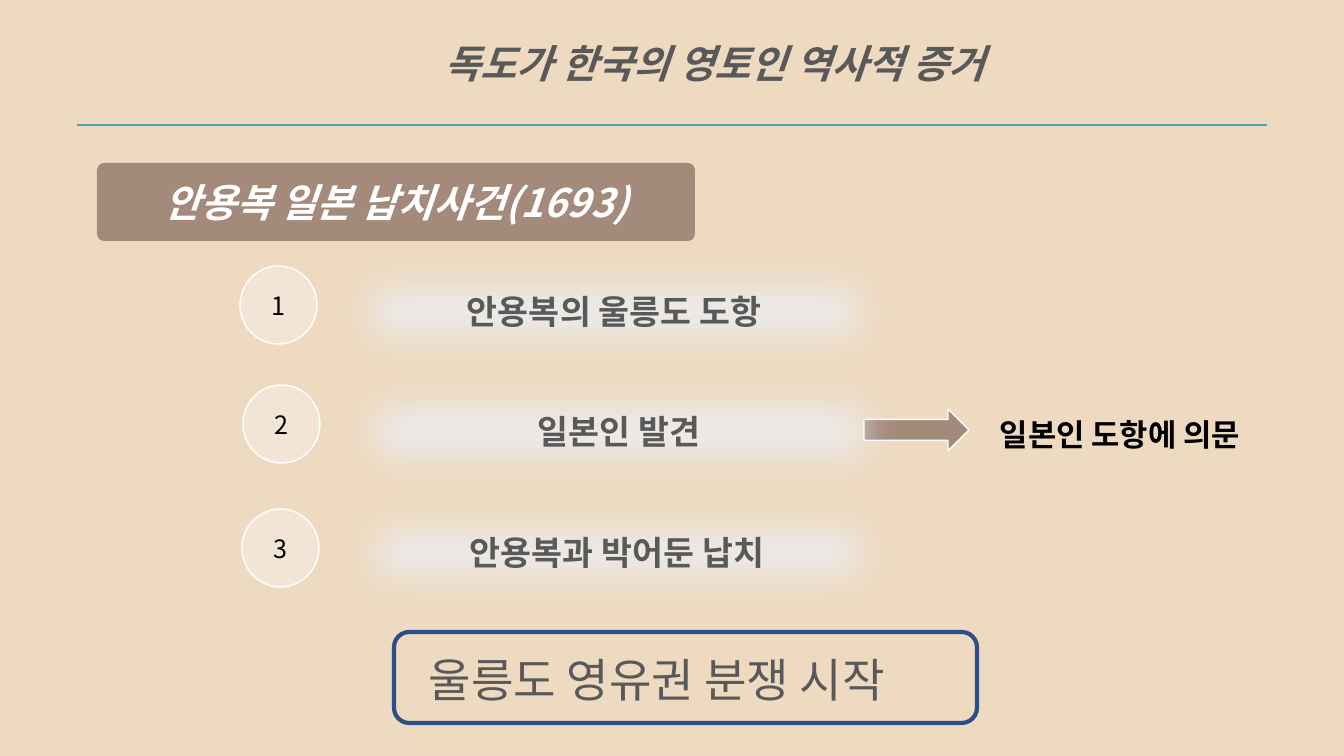
import pptx
import pptx.util
import pptx.dml.color
import pptx.enum.shapes
import pptx.enum.text
import pptx.oxml.ns
from lxml import etree

SHAPE = pptx.enum.shapes.MSO_SHAPE
ALIGN = pptx.enum.text.PP_ALIGN
FONT = "Noto Sans CJK KR"
SAND, BROWN, GRAY, WHITE, BLACK = "EEDAC1", "A48A7B", "595959", "FFFFFF", "000000"


def px(n):
    return pptx.util.Emu(round(n * 914400 / 100.8))


def rgb(color):
    return pptx.dml.color.RGBColor.from_string(color)


def add_effects(sp):
    """Give the shape its own effect list and return it."""
    return etree.SubElement(sp._element.spPr, pptx.oxml.ns.qn("a:effectLst"))


def add_shape(s, kind, box, fill, line=None, width=1, adj=None):
    sp = s.shapes.add_shape(kind, *map(px, box))
    sp.fill.solid()
    sp.fill.fore_color.rgb = rgb(fill)
    if line:
        sp.line.color.rgb = rgb(line)
        sp.line.width = pptx.util.Pt(width)
    else:
        sp.line.fill.background()
    if adj is not None:
        sp.adjustments[0] = adj
    return sp


def write(tf, text, size, color, bold=False, italic=False, align=ALIGN.LEFT, spacing=None):
    tf.word_wrap = True
    p = tf.paragraphs[0]
    p.alignment = align
    r = p.add_run()
    r.text = text
    f = r.font
    f.name, f.size, f.bold, f.italic = FONT, pptx.util.Pt(size), bold, italic
    f.color.rgb = rgb(color)
    rpr = r._r.get_or_add_rPr()
    etree.SubElement(rpr, pptx.oxml.ns.qn("a:ea")).set("typeface", FONT)
    if spacing:
        rpr.set("spc", str(spacing))
    return p


def add_text(s, box, *args, **kwargs):
    tf = s.shapes.add_textbox(*map(px, box)).text_frame
    p = write(tf, *args, **kwargs)
    tf.auto_size = pptx.enum.text.MSO_AUTO_SIZE.SHAPE_TO_FIT_TEXT
    return p


def add_rule(s, x1, x2, y, color):
    ln = s.shapes.add_connector(pptx.enum.shapes.MSO_CONNECTOR.STRAIGHT,
                                px(x1), px(y), px(x2), px(y))
    ln.line.color.rgb = rgb(color)
    ln.line.width = pptx.util.Pt(1.5)
    add_effects(ln)


def add_soft_panel(s, box, text):
    sp = add_shape(s, SHAPE.ROUNDED_RECTANGLE, box, "ECEBEB", "F2F2F2")
    soft = etree.SubElement(add_effects(sp), pptx.oxml.ns.qn("a:softEdge"))
    soft.set("rad", str(pptx.util.Pt(25)))
    sp.text_frame.vertical_anchor = pptx.enum.text.MSO_ANCHOR.MIDDLE
    write(sp.text_frame, text, 24, GRAY, bold=True, align=ALIGN.CENTER, spacing=10)


def add_badge(s, x, y, number):
    sp = add_shape(s, SHAPE.OVAL, (x, y, 77, 78), "F3E5D5", WHITE)
    sp.shadow.inherit = False
    add_text(s, (x + 22, y + 19, 37, 40), str(number), 18, BLACK, spacing=10)


def main():
    prs = pptx.Presentation()
    prs.slide_width, prs.slide_height = px(1344), px(756)
    s = prs.slides.add_slide(prs.slide_layouts[6])
    s.background.fill.solid()
    s.background.fill.fore_color.rgb = rgb(SAND)

    # Outcome frame, arrow and banner lie behind the rest
    for sp in (
        add_shape(s, SHAPE.ROUNDED_RECTANGLE, (394, 632, 583, 91), SAND, "2C4F8C", 3),
        add_shape(s, SHAPE.RIGHT_ARROW, (864, 409, 105, 42), BROWN, WHITE),
        add_shape(s, SHAPE.ROUNDED_RECTANGLE, (97, 163, 598, 78), BROWN, adj=0.09),
    ):
        sp.shadow.inherit = False

    # Title and banner text
    title = add_text(s, (383, 11, 663, 100), "독도가 한국의 영토인 역사적 증거", 28, GRAY,
                     bold=True, italic=True, align=ALIGN.CENTER)
    title.line_spacing = 1.5
    add_rule(s, 77, 1267, 125, "49A5BE")
    add_text(s, (127, 173, 538, 57), "안용복 일본 납치사건(1693)", 28, WHITE,
             bold=True, italic=True, align=ALIGN.CENTER)

    # Numbered events
    events = [
        ("안용복의 울릉도 도항", (339, 255, 551, 113), (240, 266)),
        ("일본인 발견", (342, 373, 554, 116), (243, 385)),
        ("안용복과 박어둔 납치", (342, 497, 550, 110), (242, 509)),
    ]
    for text, box, _ in events:
        add_soft_panel(s, box, text)
    for number, (_, _, (x, y)) in enumerate(events, 1):
        add_badge(s, x, y, number)

    # Side remark and outcome
    add_text(s, (990, 411, 320, 46), "일본인 도항에 의문", 22, BLACK, bold=True)
    add_text(s, (419, 646, 541, 66), "울릉도 영유권 분쟁 시작", 33, GRAY)

    prs.save("out.pptx")


if __name__ == "__main__":
    main()
